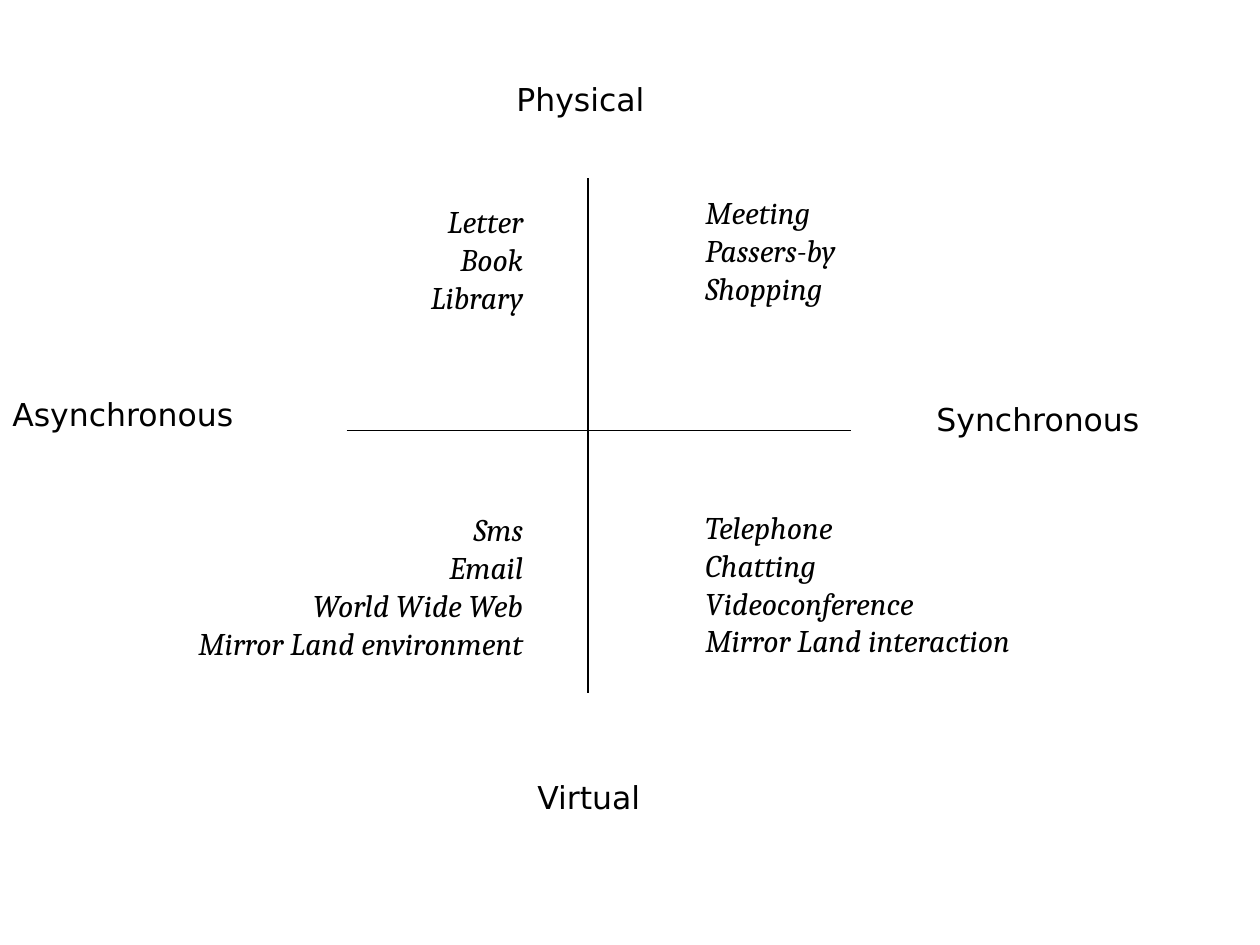
from lxml.etree import SubElement
from pptx import Presentation
from pptx.dml.color import RGBColor
from pptx.enum.shapes import MSO_CONNECTOR as Connector
from pptx.enum.text import MSO_ANCHOR as Anchor, MSO_AUTO_SIZE as AutoSize, PP_ALIGN as Align
from pptx.oxml.ns import qn
from pptx.util import Inches, Pt

THEME = {
    "ink": RGBColor(0, 0, 0),
    "label_font": "DejaVu Sans",
    "list_font": "Cambria",
    "size": Pt(18),
    "line": Pt(0.75),
}

deck = Presentation()
deck.slide_width, deck.slide_height = Inches(10), Inches(7.5)
page = deck.slides.add_slide(deck.slide_layouts[6])

COLUMN = deck.slide_width / 120
ROW = deck.slide_height / 90


def place(column, row):
    return round(column * COLUMN), round(row * ROW)


def add_text(area, lines, font, italic=False, align=Align.LEFT):
    column, row, columns, rows = area
    box = page.shapes.add_textbox(*place(column, row), *place(columns, rows))
    frame = box.text_frame
    frame.word_wrap = True
    frame.auto_size = AutoSize.SHAPE_TO_FIT_TEXT
    frame.vertical_anchor = Anchor.TOP
    for index, line in enumerate(lines):
        para = frame.add_paragraph() if index else frame.paragraphs[0]
        para.alignment = align
        span = para.add_run()
        span.text = line
        span.font.name = font
        span.font.size = THEME["size"]
        span.font.italic = italic
        span.font.color.rgb = THEME["ink"]


axis_labels = [
    ("Physical", (48, 7, 20, 6.1)),
    ("Virtual", (50, 73.5, 15.6, 6.1)),
    ("Asynchronous", (0, 37, 30.5, 6.1)),
    ("Synchronous", (88, 37.5, 28.4, 6.1)),
]
for label, area in axis_labels:
    add_text(area, [label], THEME["label_font"])

axes = [((56, 17), (56, 66)), ((33, 41), (81, 41))]
for start, end in axes:
    axis = page.shapes.add_connector(Connector.STRAIGHT, *place(*start), *place(*end))
    axis.line.color.rgb = THEME["ink"]
    axis.line.width = THEME["line"]
    SubElement(axis.element.spPr, qn("a:effectLst"))

quadrants = [
    ((66, 17.8, 22.1, 15.6), Align.LEFT, ["Meeting", "Passers-by", "Shopping"]),
    ((66, 47.8, 43.8, 20.4), Align.LEFT,
     ["Telephone", "Chatting", "Videoconference", "Mirror Land interaction"]),
    ((2, 48, 49, 20.4), Align.RIGHT,
     ["Sms", "Email", "World Wide Web", "Mirror Land environment"]),
    ((34.6, 18.7, 16.4, 15.6), Align.RIGHT, ["Letter", "Book", "Library"]),
]
for area, align, examples in quadrants:
    add_text(area, examples, THEME["list_font"], italic=True, align=align)

deck.save("out.pptx")
